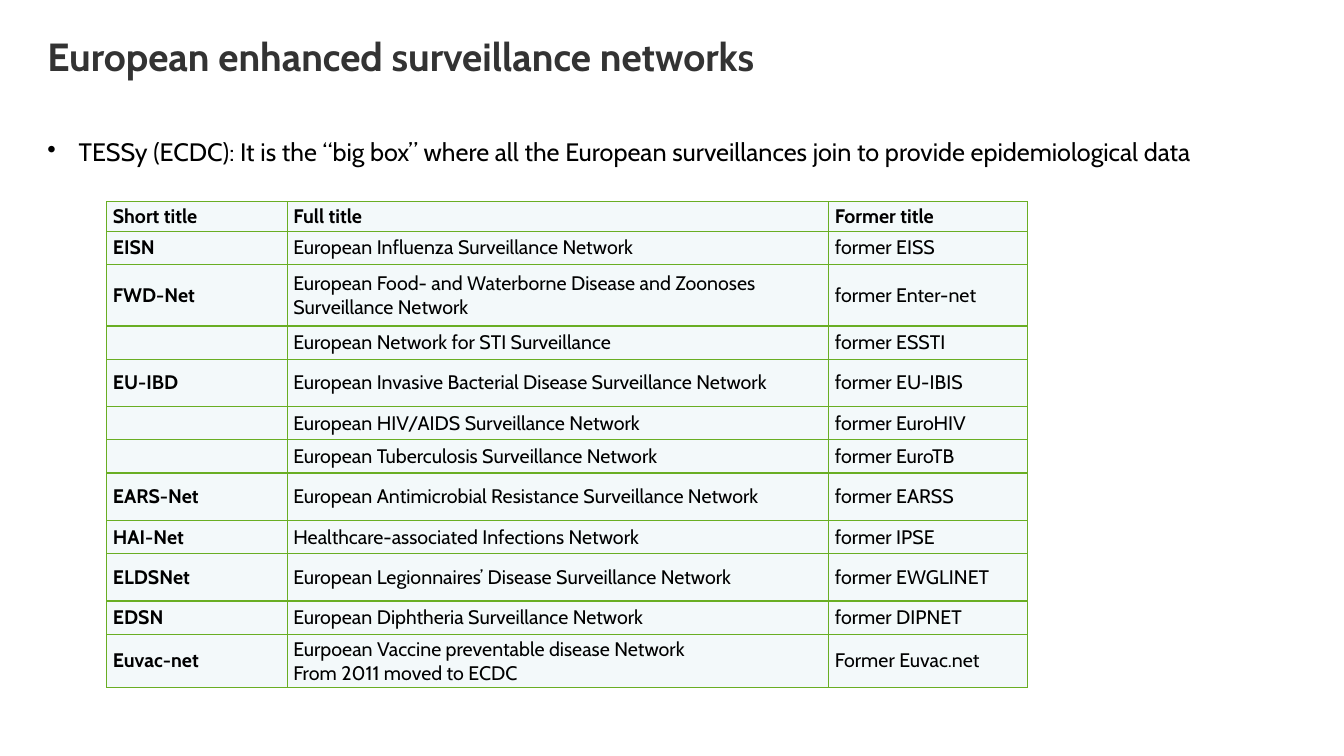
from lxml.etree import SubElement
from pptx import Presentation
from pptx.dml.color import RGBColor
from pptx.enum.text import MSO_ANCHOR as Anchor
from pptx.oxml.ns import qn
from pptx.util import Inches, Pt

TITLE_GREY = RGBColor(0x33, 0x33, 0x33)
BLACK = RGBColor(0x00, 0x00, 0x00)
CELL_TINT = RGBColor(0xF3, 0xF9, 0xFA)
BORDER_GREEN = RGBColor(0x69, 0xAE, 0x23)

COLUMN_WIDTHS = [1.79, 5.37, 1.97]
ROW_HEIGHTS = [0.29, 0.33, 0.61, 0.33, 0.47, 0.33, 0.33, 0.47, 0.33, 0.47, 0.33, 0.52]
NETWORKS = [
    ("Short title", "Full title", "Former title"),
    ("EISN", "European Influenza Surveillance Network", "former EISS"),
    ("FWD-Net", "European Food- and Waterborne Disease and Zoonoses Surveillance Network",
     "former Enter-net"),
    ("", "European Network for STI Surveillance", "former ESSTI"),
    ("EU-IBD", "European Invasive Bacterial Disease Surveillance Network", "former EU-IBIS"),
    ("", "European HIV/AIDS Surveillance Network", "former EuroHIV"),
    ("", "European Tuberculosis Surveillance Network", "former EuroTB"),
    ("EARS-Net", "European Antimicrobial Resistance Surveillance Network", "former EARSS"),
    ("HAI-Net", "Healthcare-associated Infections Network", "former IPSE"),
    ("ELDSNet", "European Legionnaires’ Disease Surveillance Network", "former EWGLINET"),
    ("EDSN", "European Diphtheria Surveillance Network", "former DIPNET"),
    ("Euvac-net", "Eurpoean Vaccine preventable disease Network\nFrom 2011 moved to ECDC",
     "Former Euvac.net"),
]


class SlideBuilder:
    """Holds the text style and the current page."""

    font_name = "Cabin"
    table_size = 14

    def __init__(self, page):
        self.page = page

    def add_text(self, para, text, size, color=BLACK, bold=False):
        for number, line in enumerate(text.split("\n")):
            if number:
                para.add_line_break()
            span = para.add_run()
            span.text = line
            span.font.name = self.font_name
            span.font.size = Pt(size)
            span.font.bold = bold
            span.font.color.rgb = color

    def text_box(self, left, top, width, height):
        """Adds a box without margins and returns its first paragraph."""
        box = self.page.shapes.add_textbox(
            Inches(left), Inches(top), Inches(width), Inches(height))
        frame = box.text_frame
        frame.word_wrap = True
        frame.margin_left = frame.margin_right = 0
        frame.margin_top = frame.margin_bottom = 0
        para = frame.paragraphs[0]
        para.line_spacing = 0.9
        return para

    def bullet(self, para, indent):
        properties = para._p.get_or_add_pPr()
        properties.set("marL", str(Inches(indent)))
        properties.set("indent", str(-Inches(indent)))
        SubElement(properties, qn("a:buChar"), char="•")

    def borders(self, cell):
        properties = cell._tc.get_or_add_tcPr()
        for position, side in enumerate(("lnL", "lnR", "lnT", "lnB")):
            line = SubElement(properties, qn(f"a:{side}"), w=str(Pt(1)))
            fill = SubElement(line, qn("a:solidFill"))
            SubElement(fill, qn("a:srgbClr"), val=str(BORDER_GREEN))
            properties.insert(position, line)

    def cell(self, cell, text, bold):
        cell.margin_left = cell.margin_right = Inches(0.06)
        cell.margin_top = cell.margin_bottom = Inches(0.03)
        cell.vertical_anchor = Anchor.MIDDLE
        cell.fill.solid()
        cell.fill.fore_color.rgb = CELL_TINT
        self.borders(cell)
        para = cell.text_frame.paragraphs[0]
        if text:
            self.add_text(para, text, self.table_size, bold=bold)
        else:
            # An empty cell keeps the table text size so its row stays low
            SubElement(para._p, qn("a:endParaRPr"), sz=str(self.table_size * 100))

    def table(self, left, top, widths, heights, rows):
        frame = self.page.shapes.add_table(
            len(rows), len(widths), Inches(left), Inches(top),
            Inches(sum(widths)), Inches(sum(heights)))
        table = frame.table
        for column, width in zip(table.columns, widths):
            column.width = Inches(width)
        for row, height in zip(table.rows, heights):
            row.height = Inches(height)
        for r, texts in enumerate(rows):
            for c, text in enumerate(texts):
                self.cell(table.cell(r, c), text, bold=r == 0 or c == 0)


def main():
    deck = Presentation()
    deck.slide_width, deck.slide_height = Inches(13.33), Inches(7.5)
    builder = SlideBuilder(deck.slides.add_slide(deck.slide_layouts[6]))

    # Title
    title = builder.text_box(0.47, 0.37, 11.28, 0.52)
    builder.add_text(title, "European enhanced surveillance networks", 28, TITLE_GREY, bold=True)

    # Introduction
    intro = builder.text_box(0.47, 1.39, 12.43, 0.4)
    intro.space_after = Pt(6)
    builder.bullet(intro, 0.31)
    builder.add_text(intro, "TESSy (ECDC): It is the “big box” where all the European "
                     "surveillances join to provide epidemiological data", 18)

    # Networks
    builder.table(1.06, 2, COLUMN_WIDTHS, ROW_HEIGHTS, NETWORKS)

    deck.save("out.pptx")


if __name__ == "__main__":
    main()
